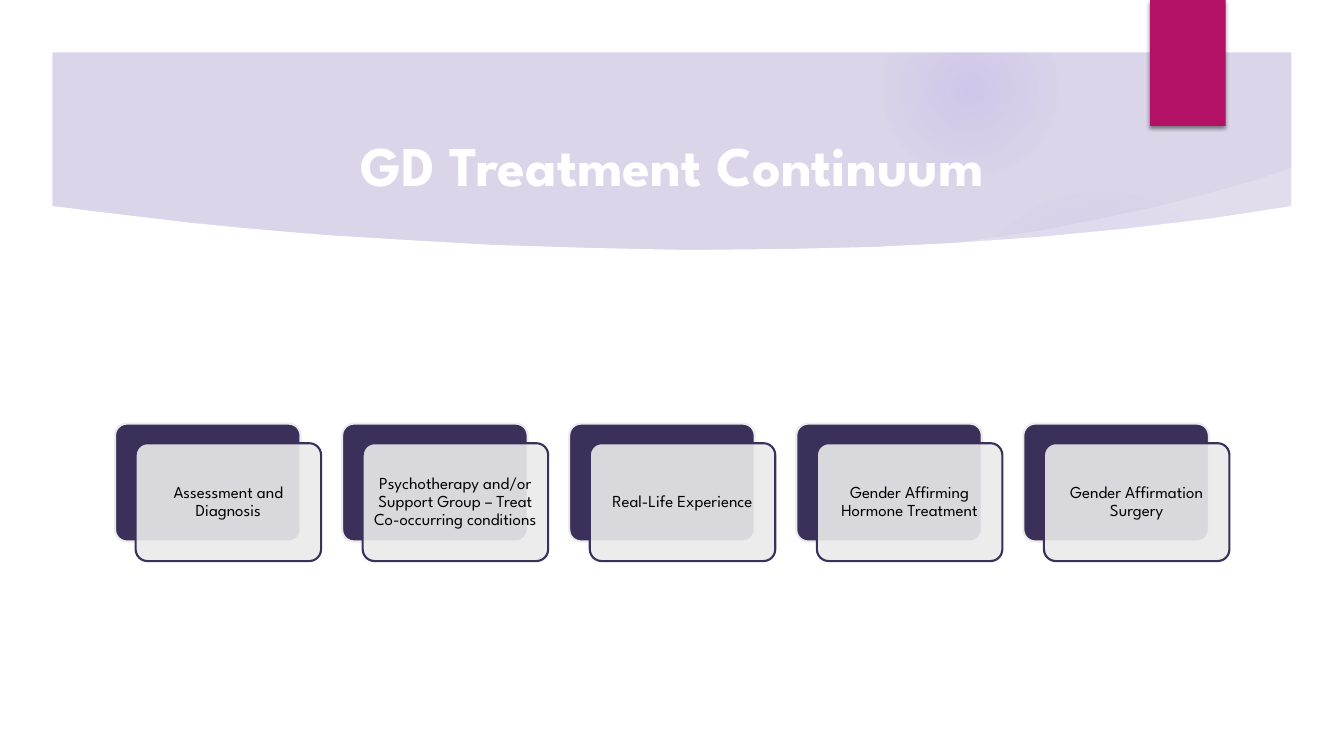
from lxml import etree
from pptx import Presentation
from pptx.dml.color import RGBColor
from pptx.enum import shapes, text
from pptx.oxml import parse_xml
from pptx.oxml.ns import nsdecls, qn
from pptx.util import Pt

COLORS = {
    "lavender": "DAD5E9", "glow": "9B6BF2", "white": "FFFFFF", "magenta": "B31166",
    "plum": "3B3059", "mist": "EBEBEB", "black": "000000",
}
FONT = "League Spartan"
STEPS = [
    "Assessment and Diagnosis",
    "Psychotherapy and/or Support Group – Treat Co-occurring conditions",
    "Real-Life Experience",
    "Gender Affirming Hormone Treatment",
    "Gender Affirmation Surgery",
]


def paint(shape, fill, alpha=100, line=None):
    """Give a shape a flat fill of the given opacity, and a line or none."""
    shape.shadow.inherit = False
    shape.fill.solid()
    shape.fill.fore_color.rgb = RGBColor.from_string(COLORS[fill])
    if alpha < 100:
        color = shape._element.spPr.find(qn("a:solidFill"))[0]
        etree.SubElement(color, qn("a:alpha"), val=str(alpha * 1000))
    if line:
        shape.line.color.rgb = RGBColor.from_string(COLORS[line])
        shape.line.width = Pt(1.5)
    else:
        shape.line.fill.background()


def add_outline(*contours):
    """Draw a white freeform from closed contours given in points."""
    paths = [[(Pt(x), Pt(y)) for x, y in contour] for contour in contours]
    builder = slide.shapes.build_freeform(*paths[0][0], scale=1.0)
    builder.add_line_segments(paths[0][1:], close=True)
    for path in paths[1:]:
        builder.move_to(*path[0])
        builder.add_line_segments(path[1:], close=True)
    return builder.convert_to_shape()


prs = Presentation()
prs.slide_width, prs.slide_height = Pt(960), Pt(540)
slide = prs.slides.add_slide(prs.slide_layouts[5])
slide.background.fill.solid()
slide.background.fill.fore_color.rgb = RGBColor.from_string(COLORS["lavender"])

# Soft glows: left, top, diameter, then (position, opacity) stops in percent
glows = [
    (677.5, 131.8, 221.8, [(0, 7), (36, 6), (69, 0)]),
    (630, 0.7, 126, [(0, 14), (36, 7), (73, 0)]),
]
for left, top, diameter, stops in glows:
    glow = slide.shapes.add_shape(
        shapes.MSO_SHAPE.OVAL, Pt(left), Pt(top), Pt(diameter), Pt(diameter))
    paint(glow, "glow")
    stop_xml = "".join(
        f'<a:gs pos="{pos * 1000}"><a:srgbClr val="{COLORS["glow"]}">'
        f'<a:alpha val="{alpha * 1000}"/></a:srgbClr></a:gs>' for pos, alpha in stops)
    gradient = parse_xml(
        f'<a:gradFill {nsdecls("a")}><a:gsLst>{stop_xml}</a:gsLst><a:path path="circle">'
        '<a:fillToRect l="50000" t="50000" r="50000" b="50000"/></a:path></a:gradFill>')
    solid = glow._element.spPr.find(qn("a:solidFill"))
    solid.getparent().replace(solid, gradient)

# Banner: swoosh, white page with a curved top, and white frame
swoosh = add_outline([
    (669.6, 175), (697.7, 171.4), (742.3, 164.9), (782, 157), (823.7, 148.3),
    (865.4, 137.5), (898.6, 128.2), (923.8, 119.5), (928, 154), (806, 172), (672.5, 180)])
paint(swoosh, "white", alpha=20)

page = add_outline([
    (36, 147), (68, 151), (97, 154.5), (134.6, 159), (179, 163.4), (231, 167.8),
    (289, 171.4), (351, 174.9), (420, 177.1), (491, 178.6), (566, 177.8), (624, 176.4),
    (683, 173.5), (743, 169.2), (803.5, 163.4), (864, 156.2), (924, 147),
    (924, 504), (36, 504)])
paint(page, "white")

frame = add_outline(
    [(0, 0), (0, 540), (960, 540), (960, 0)],
    [(922.5, 502.5), (37.5, 502.5), (37.5, 37.5), (922.5, 37.5)])
paint(frame, "white")

ribbon = slide.shapes.add_shape(shapes.MSO_SHAPE.RECTANGLE, Pt(821.5), 0, Pt(54), Pt(90))
paint(ribbon, "magenta")
ribbon._element.spPr.find(qn("a:effectLst")).append(parse_xml(
    f'<a:outerShdw {nsdecls("a")} blurRad="{Pt(3)}" dist="{Pt(2)}" dir="5400000" '
    f'rotWithShape="0"><a:srgbClr val="{COLORS["black"]}"><a:alpha val="45000"/>'
    '</a:srgbClr></a:outerShdw>'))

title = slide.shapes.title
slide.shapes._spTree.append(title._element)  # bring in front of the banner
title.left, title.top, title.width, title.height = Pt(93), Pt(65), Pt(774), Pt(104)
title.text_frame.text = "GD Treatment Continuum"
title.text_frame.vertical_anchor = text.MSO_ANCHOR.MIDDLE
heading = title.text_frame.paragraphs[0]
heading.alignment = text.PP_ALIGN.CENTER
heading_font = heading.runs[0].font
heading_font.name, heading_font.size, heading_font.bold = FONT, Pt(40), True
heading_font.color.rgb = RGBColor.from_string(COLORS["white"])

# Treatment steps: a dark card behind a translucent labelled one
CARD_WIDTH, CARD_HEIGHT, PITCH = 132.5, 84.2, 162.2
for i, step in enumerate(STEPS):
    left = 82.2 + i * PITCH
    for x, y, fill, alpha, line in [
        (left, 302.6, "plum", 100, "mist"),
        (left + 14.7, 316.6, "mist", 90, "plum"),
    ]:
        card = slide.shapes.add_shape(
            shapes.MSO_SHAPE.ROUNDED_RECTANGLE,
            Pt(x), Pt(y), Pt(CARD_WIDTH), Pt(CARD_HEIGHT))
        card.adjustments[0] = 0.1
        paint(card, fill, alpha, line)
    label = card.text_frame
    label.word_wrap = True
    label.vertical_anchor = text.MSO_ANCHOR.MIDDLE
    label.margin_left = label.margin_right = Pt(3.6)
    label.text = step
    paragraph = label.paragraphs[0]
    paragraph.alignment = text.PP_ALIGN.CENTER
    paragraph.line_spacing = 0.9
    label_font = paragraph.runs[0].font
    label_font.name, label_font.size = FONT, Pt(12)
    label_font.color.rgb = RGBColor.from_string(COLORS["black"])

prs.save("out.pptx")
